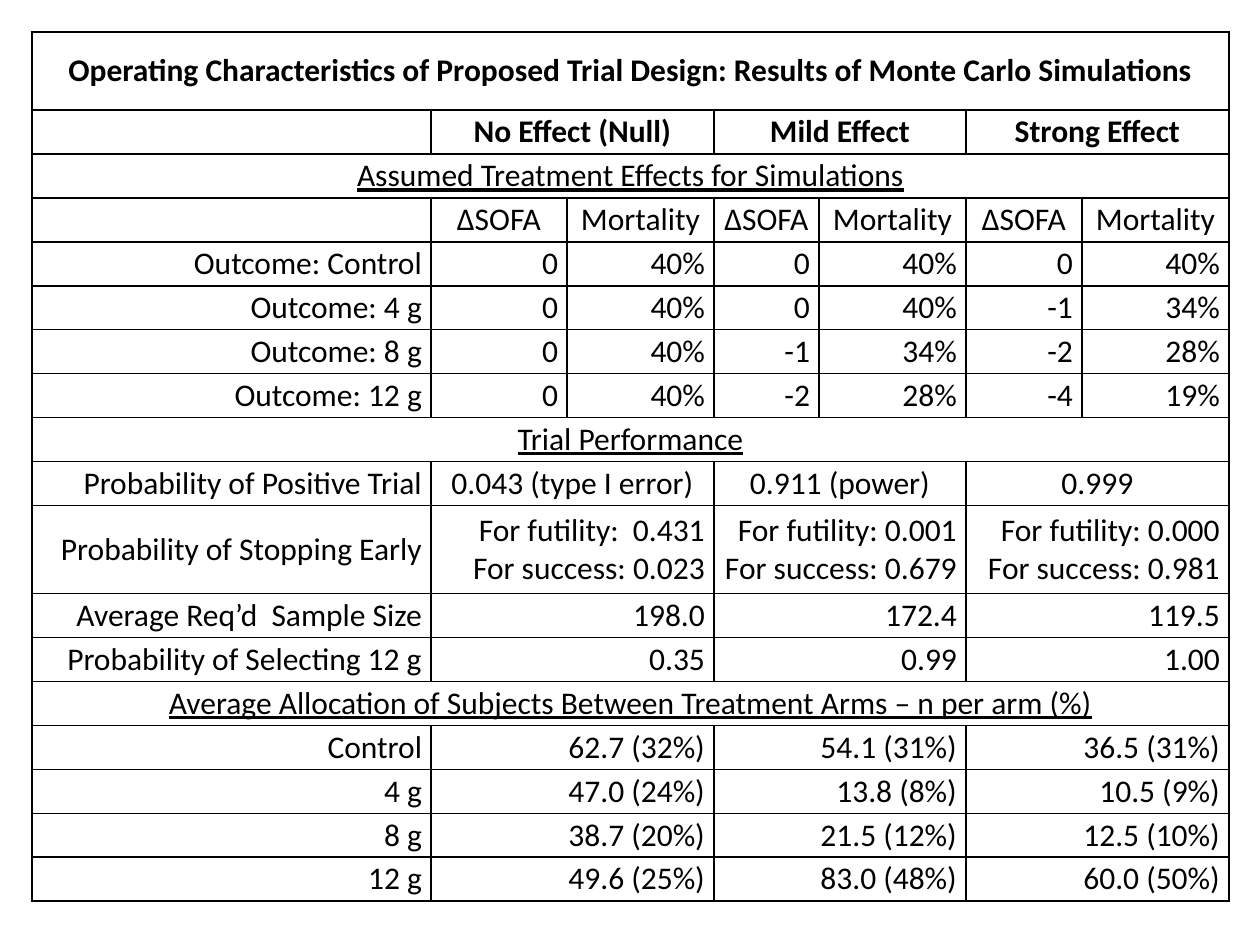
import pptx
import pptx.dml.color
import pptx.enum.text
import pptx.oxml
import pptx.oxml.ns
import pptx.util

SCALE = 914400 / 126
BLACK = "000000"
WIDTHS = [399, 136, 147, 105, 147, 116, 147]
LINE, HEAD = 44, 78
ALIGN = pptx.enum.text.PP_ALIGN
# cells in a row -> columns that each cell takes
SPANS = {1: [7], 4: [1, 2, 2, 2], 7: [1] * 7}

# (style, cells): a row has 1 cell, 4 cells or 7 cells
ROWS = [
    ("bold", ["Operating Characteristics of Proposed Trial Design: "
              "Results of Monte Carlo Simulations"]),
    ("bold", ["", "No Effect (Null)", "Mild Effect", "Strong Effect"]),
    ("under", ["Assumed Treatment Effects for Simulations"]),
    ("center", [""] + ["ΔSOFA", "Mortality"] * 3),
    ("right", ["Outcome: Control", "0", "40%", "0", "40%", "0", "40%"]),
    ("right", ["Outcome: 4 g", "0", "40%", "0", "40%", "-1", "34%"]),
    ("right", ["Outcome: 8 g", "0", "40%", "-1", "34%", "-2", "28%"]),
    ("right", ["Outcome: 12 g", "0", "40%", "-2", "28%", "-4", "19%"]),
    ("under", ["Trial Performance"]),
    ("center", ["Probability of Positive Trial", "0.043 (type I error)",
                "0.911 (power)", "0.999"]),
    ("right", ["Probability of Stopping Early",
               "For futility:  0.431\nFor success: 0.023",
               "For futility: 0.001\nFor success: 0.679",
               "For futility: 0.000\nFor success: 0.981"]),
    ("right", ["Average Req’d  Sample Size", "198.0", "172.4", "119.5"]),
    ("right", ["Probability of Selecting 12 g", "0.35", "0.99", "1.00"]),
    ("under", ["Average Allocation of Subjects Between Treatment Arms – n per arm (%)"]),
    ("right", ["Control", "62.7 (32%)", "54.1 (31%)", "36.5 (31%)"]),
    ("right", ["4 g", "47.0 (24%)", "13.8 (8%)", "10.5 (9%)"]),
    ("right", ["8 g", "38.7 (20%)", "21.5 (12%)", "12.5 (10%)"]),
    ("right", ["12 g", "49.6 (25%)", "83.0 (48%)", "60.0 (50%)"]),
]


def px(n):
    return pptx.util.Emu(round(n * SCALE))


def color(code):
    return pptx.dml.color.RGBColor.from_string(code)


def tall(row, cells):
    """Height of a row, from its number and its count of text lines."""
    if row == 0:
        return HEAD
    return LINE * max(text.count("\n") + 1 for text in cells)


def frame(cell):
    """Rule all four sides of a cell and clear its fill."""
    props = cell._tc.get_or_add_tcPr()
    for side in ("lnL", "lnR", "lnT", "lnB"):
        props.append(pptx.oxml.parse_xml(
            f'<a:{side} {pptx.oxml.ns.nsdecls("a")} w="12700"><a:solidFill>'
            f'<a:srgbClr val="{BLACK}"/></a:solidFill></a:{side}>'))
    cell.fill.background()
    cell.margin_left = cell.margin_right = px(9)
    cell.margin_top = cell.margin_bottom = 0
    cell.vertical_anchor = pptx.enum.text.MSO_ANCHOR.MIDDLE


def write(cell, text, style, align):
    for i, line in enumerate(text.split("\n")):
        para = cell.text_frame.paragraphs[0] if i == 0 else cell.text_frame.add_paragraph()
        para.alignment = align
        if not line:
            continue
        run = para.add_run()
        run.text = line
        font = run.font
        font.name = "Calibri"
        font.size = pptx.util.Pt(18)
        font.color.rgb = color(BLACK)
        font.bold = style == "bold"
        font.underline = style == "under"


def fill(table, row, style, cells):
    """Merge and write the cells of one row."""
    col = 0
    for text, span in zip(cells, SPANS[len(cells)]):
        cell = table.cell(row, col)
        if span > 1:
            cell.merge(table.cell(row, col + span - 1))
        label = col == 0 and len(cells) > 1
        align = ALIGN.RIGHT if label or style == "right" else ALIGN.CENTER
        write(cell, text, style, align)
        col += span


def grid(slide, left, top):
    highs = [tall(i, cells) for i, (_, cells) in enumerate(ROWS)]
    table = slide.shapes.add_table(len(ROWS), len(WIDTHS), px(left), px(top),
                                   px(sum(WIDTHS)), px(sum(highs))).table
    table.first_row = table.horz_banding = False
    for col, wide in zip(table.columns, WIDTHS):
        col.width = px(wide)
    for row, high in zip(table.rows, highs):
        row.height = px(high)
    for cell in table.iter_cells():
        frame(cell)
    for i, (style, cells) in enumerate(ROWS):
        fill(table, i, style, cells)


def main():
    deck = pptx.Presentation()
    deck.slide_width, deck.slide_height = px(1260), px(945)
    slide = deck.slides.add_slide(deck.slide_layouts[6])
    grid(slide, 32, 32)
    deck.save("out.pptx")


if __name__ == "__main__":
    main()
